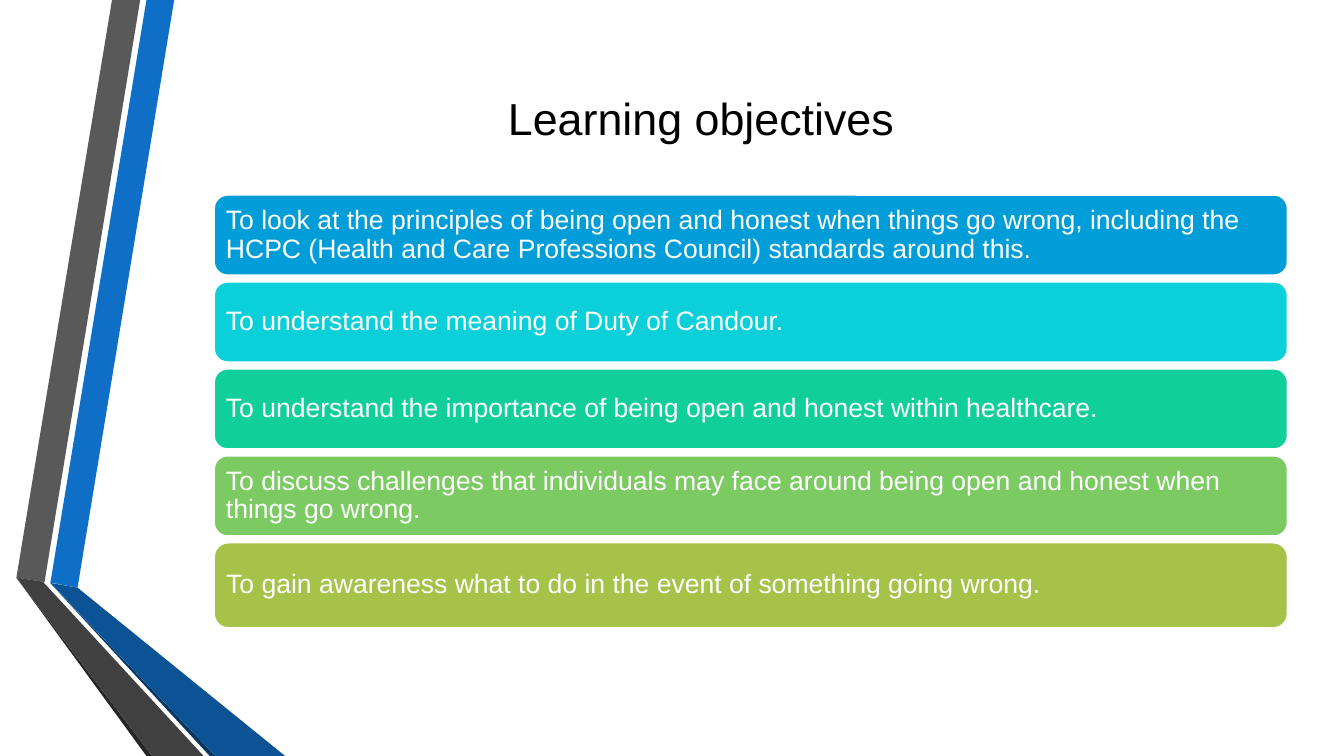
import pptx
import pptx.dml.color
import pptx.enum.shapes
import pptx.enum.text
import pptx.util

Pt = pptx.util.Pt

COLOURS = {
    "white": "FFFFFF",
    "black": "000000",
    "blue": "0F6FC6",
    "blue_fold": "0B5394",
    "blue_edge": "083763",
    "grey": "595959",
    "grey_fold": "404040",
    "grey_edge": "262626",
    "azure": "009DD9",
    "cyan": "0BD0D9",
    "teal": "10CF9B",
    "green": "7CCA62",
    "olive": "A5C249",
}

RIBBONS = [
    ("blue", [(36, 416.2), (55.4, 419.8), (124.4, 0), (104.6, 0)]),
    ("grey", [(100.1, 0), (80, 0), (11.7, 412.6), (31.8, 415.7)]),
    ("grey_edge", [(11.7, 412.6), (104.6, 540), (108.7, 540)]),
    ("blue_edge", [(36, 416.6), (149.8, 540), (154, 540)]),
    ("blue_fold", [(36, 416.4), (154, 540), (203.6, 540), (55.4, 419.8)]),
    ("grey_fold", [(11.7, 412.6), (108.7, 540), (145.4, 540), (34.6, 419.8), (31, 416.2), (31.8, 415.7)]),
]

OBJECTIVES = [
    ("azure", "To look at the principles of being open and honest when things go wrong, "
              "including the HCPC (Health and Care Professions Council) standards around this."),
    ("cyan", "To understand the meaning of Duty of Candour."),
    ("teal", "To understand the importance of being open and honest within healthcare."),
    ("green", "To discuss challenges that individuals may face around being open and honest "
              "when things go wrong."),
    ("olive", "To gain awareness what to do in the event of something going wrong."),
]

BAR_LEFT, BAR_TOP, BAR_WIDTH = 152.9, 139.2, 766.8
BAR_HEIGHT, LAST_BAR_HEIGHT, BAR_PITCH = 57.4, 61, 62.1


def rgb(name):
    """Return the named colour."""
    return pptx.dml.color.RGBColor.from_string(COLOURS[name])


def paint(shape, colour):
    """Give a shape a plain fill without a shadow."""
    shape.shadow.inherit = False
    shape.fill.solid()
    shape.fill.fore_color.rgb = rgb(colour)


def format_text(text_frame, size, colour, alignment):
    """Format the single paragraph of a text frame."""
    text_frame.word_wrap = True
    text_frame.vertical_anchor = pptx.enum.text.MSO_ANCHOR.MIDDLE
    paragraph = text_frame.paragraphs[0]
    paragraph.alignment = alignment
    font = paragraph.runs[0].font
    font.name = "Arial"
    font.size = Pt(size)
    font.color.rgb = rgb(colour)


def add_ribbon(slide, colour, corners):
    """Draw one closed piece of the folded ribbons."""
    points = [(Pt(x), Pt(y)) for x, y in corners]
    builder = slide.shapes.build_freeform(*points[0])
    builder.add_line_segments(points[1:], close=True)
    shape = builder.convert_to_shape()
    paint(shape, colour)
    shape.line.fill.background()


def set_title(slide, text):
    """Place and format the slide title."""
    title = slide.shapes.title
    title.left, title.top, title.width, title.height = Pt(117.4), Pt(29.5), Pt(766.8), Pt(108.7)
    title.text_frame.text = text
    format_text(title.text_frame, 32, "black", pptx.enum.text.PP_ALIGN.CENTER)


def add_objective(slide, top, height, colour, text):
    """Add one rounded bar that holds a learning objective."""
    shape = slide.shapes.add_shape(
        pptx.enum.shapes.MSO_SHAPE.ROUNDED_RECTANGLE,
        Pt(BAR_LEFT), Pt(top), Pt(BAR_WIDTH), Pt(height))
    paint(shape, colour)
    shape.line.color.rgb = rgb("white")
    shape.line.width = Pt(1.25)
    text_frame = shape.text_frame
    text_frame.margin_left = text_frame.margin_right = Pt(5.7)
    text_frame.margin_top = text_frame.margin_bottom = Pt(5.7)
    text_frame.text = text
    text_frame.paragraphs[0].line_spacing = 0.9
    format_text(text_frame, 19, "white", pptx.enum.text.PP_ALIGN.LEFT)


def main():
    """Build and save the learning objectives slide."""
    presentation = pptx.Presentation()
    presentation.slide_width, presentation.slide_height = Pt(960), Pt(540)
    slide = presentation.slides.add_slide(presentation.slide_layouts.get_by_name("Title Only"))
    for colour, corners in RIBBONS:
        add_ribbon(slide, colour, corners)
    set_title(slide, "Learning objectives")
    last = len(OBJECTIVES) - 1
    for index, (colour, text) in enumerate(OBJECTIVES):
        height = LAST_BAR_HEIGHT if index == last else BAR_HEIGHT
        add_objective(slide, BAR_TOP + index * BAR_PITCH, height, colour, text)
    presentation.save("out.pptx")


if __name__ == "__main__":
    main()
